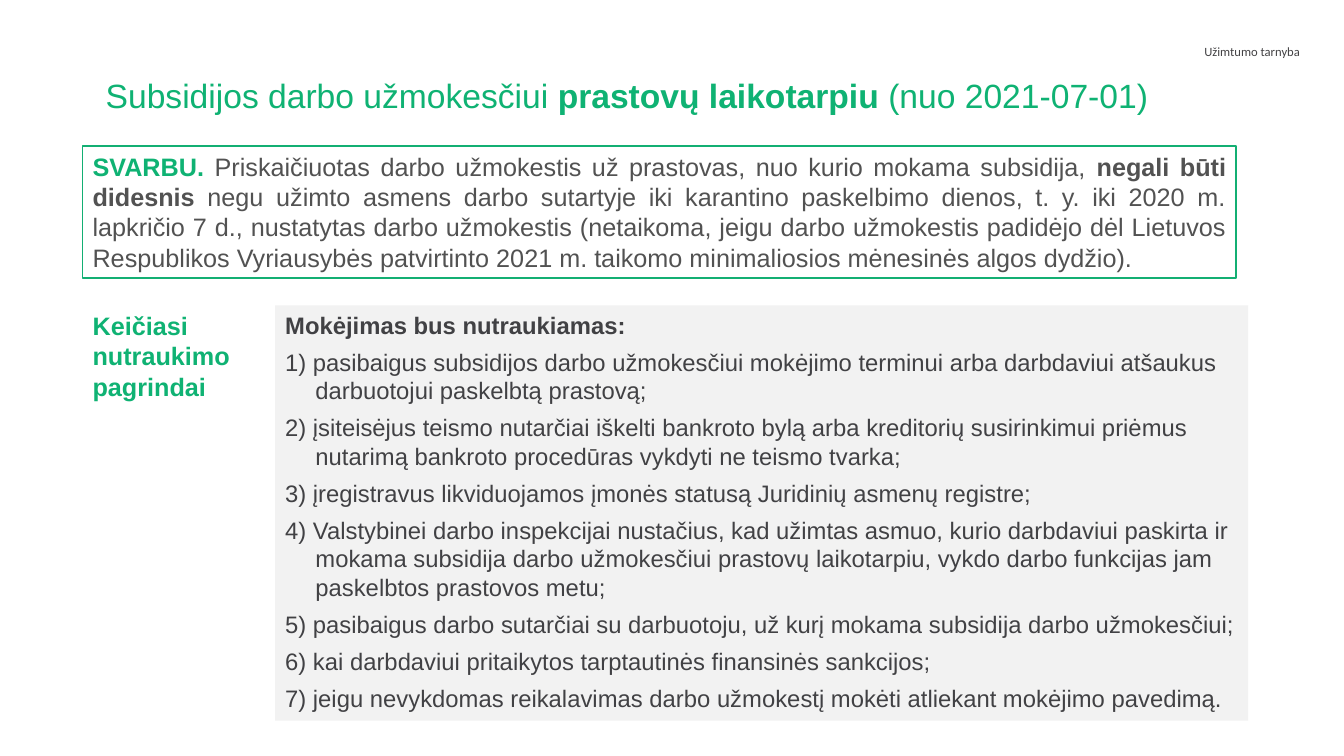
from dataclasses import dataclass
from typing import Optional

import pptx
import pptx.dml.color
import pptx.enum.shapes
import pptx.enum.text
import pptx.util
from pptx.dml.color import RGBColor
from pptx.enum.text import PP_ALIGN
from pptx.util import Inches

GREEN = RGBColor(0x0F, 0xB2, 0x73)
BORDER_GREEN = RGBColor(0x13, 0xAF, 0x73)
GREY = RGBColor(0x52, 0x52, 0x52)
DARK = RGBColor(0x41, 0x41, 0x44)
HEADER_GREY = RGBColor(0x43, 0x42, 0x44)
PANEL_GREY = RGBColor(0xF2, 0xF2, 0xF2)


@dataclass(frozen=True)
class Run:
    text: str
    color: RGBColor
    bold: bool = False


@dataclass(frozen=True)
class Block:
    left: float
    top: float
    width: float
    height: float
    paragraphs: list[list[Run]]
    size: float
    font: str = "Arial"
    align: PP_ALIGN = PP_ALIGN.LEFT
    line_spacing: float = 1.0
    space_after: float = 0
    hanging: float = 0
    fill: Optional[RGBColor] = None
    border: Optional[RGBColor] = None


def draw_block(slide: pptx.slide.Slide, block: Block) -> None:
    bounds = [Inches(v) for v in (block.left, block.top, block.width, block.height)]
    if block.fill is None and block.border is None:
        shape = slide.shapes.add_textbox(*bounds)
    else:
        shape = slide.shapes.add_shape(pptx.enum.shapes.MSO_SHAPE.RECTANGLE, *bounds)
        shape.shadow.inherit = False
        if block.fill is None:
            shape.fill.background()
        else:
            shape.fill.solid()
            shape.fill.fore_color.rgb = block.fill
        if block.border is None:
            shape.line.fill.background()
        else:
            shape.line.color.rgb = block.border
            shape.line.width = pptx.util.Pt(1)

    frame = shape.text_frame
    frame.word_wrap = True
    frame.vertical_anchor = pptx.enum.text.MSO_ANCHOR.TOP
    for index, runs in enumerate(block.paragraphs):
        paragraph = frame.add_paragraph() if index else frame.paragraphs[0]
        paragraph.alignment = block.align
        paragraph.line_spacing = block.line_spacing
        paragraph.space_after = pptx.util.Pt(block.space_after)
        if block.hanging:
            properties = paragraph._p.get_or_add_pPr()
            properties.set("marL", str(Inches(block.hanging)))
            properties.set("indent", str(-Inches(block.hanging)))
        for part in runs:
            run = paragraph.add_run()
            run.text = part.text
            run.font.name = block.font
            run.font.size = pptx.util.Pt(block.size)
            run.font.bold = part.bold
            run.font.color.rgb = part.color


TERMINATION_GROUNDS = [
    "pasibaigus subsidijos darbo užmokesčiui mokėjimo terminui arba darbdaviui "
    "atšaukus darbuotojui paskelbtą prastovą;",
    "įsiteisėjus teismo nutarčiai iškelti bankroto bylą arba kreditorių susirinkimui "
    "priėmus nutarimą bankroto procedūras vykdyti ne teismo tvarka;",
    "įregistravus likviduojamos įmonės statusą Juridinių asmenų registre;",
    "Valstybinei darbo inspekcijai nustačius, kad užimtas asmuo, kurio darbdaviui "
    "paskirta ir mokama subsidija darbo užmokesčiui prastovų laikotarpiu, vykdo darbo "
    "funkcijas jam paskelbtos prastovos metu;",
    "pasibaigus darbo sutarčiai su darbuotoju, už kurį mokama subsidija darbo užmokesčiui;",
    "kai darbdaviui pritaikytos tarptautinės finansinės sankcijos;",
    "jeigu nevykdomas reikalavimas darbo užmokestį mokėti atliekant mokėjimo pavedimą.",
]

agency_header = Block(
    8.49, 0.39, 4.5, 0.47,
    [[Run("Užimtumo tarnyba", HEADER_GREY)]],
    size=9, font="Calibri", align=PP_ALIGN.RIGHT,
)
title = Block(
    0.95, 0.74, 11.44, 0.75,
    [[
        Run("Subsidijos darbo užmokesčiui ", GREEN),
        Run("prastovų laikotarpiu ", GREEN, True),
        Run("(nuo 2021-07-01)", GREEN),
    ]],
    size=24, line_spacing=0.9,
)
important_notice = Block(
    0.82, 1.45, 11.44, 1.31,
    [[
        Run("SVARBU. ", GREEN, True),
        Run("Priskaičiuotas darbo užmokestis už prastovas, nuo kurio mokama subsidija, ", GREY),
        Run("negali būti didesnis", GREY, True),
        Run(
            " negu užimto asmens darbo sutartyje iki karantino paskelbimo dienos, t. y. iki "
            "2020 m. lapkričio 7 d., nustatytas darbo užmokestis (netaikoma, jeigu darbo "
            "užmokestis padidėjo dėl Lietuvos Respublikos Vyriausybės patvirtinto 2021 m. "
            "taikomo minimaliosios mėnesinės algos dydžio).",
            GREY,
        ),
    ]],
    size=18, align=PP_ALIGN.JUSTIFY, space_after=6, border=BORDER_GREEN,
)
termination_panel = Block(
    2.73, 3.03, 9.65, 4.12,
    [[Run("Mokėjimas bus nutraukiamas:", DARK, True)]]
    + [[Run(f"{n}) {ground}", DARK)] for n, ground in enumerate(TERMINATION_GROUNDS, 1)],
    size=17, space_after=6, hanging=0.3, fill=PANEL_GREY,
)
change_label = Block(
    0.82, 3.03, 2.42, 1.01,
    [[Run("Keičiasi nutraukimo pagrindai", GREEN, True)]],
    size=18,
)


def main() -> None:
    presentation = pptx.Presentation()
    presentation.slide_width = Inches(13.33)
    presentation.slide_height = Inches(7.5)
    slide = presentation.slides.add_slide(presentation.slide_layouts[6])
    for block in (agency_header, title, important_notice, termination_panel, change_label):
        draw_block(slide, block)
    presentation.save("out.pptx")


if __name__ == "__main__":
    main()
